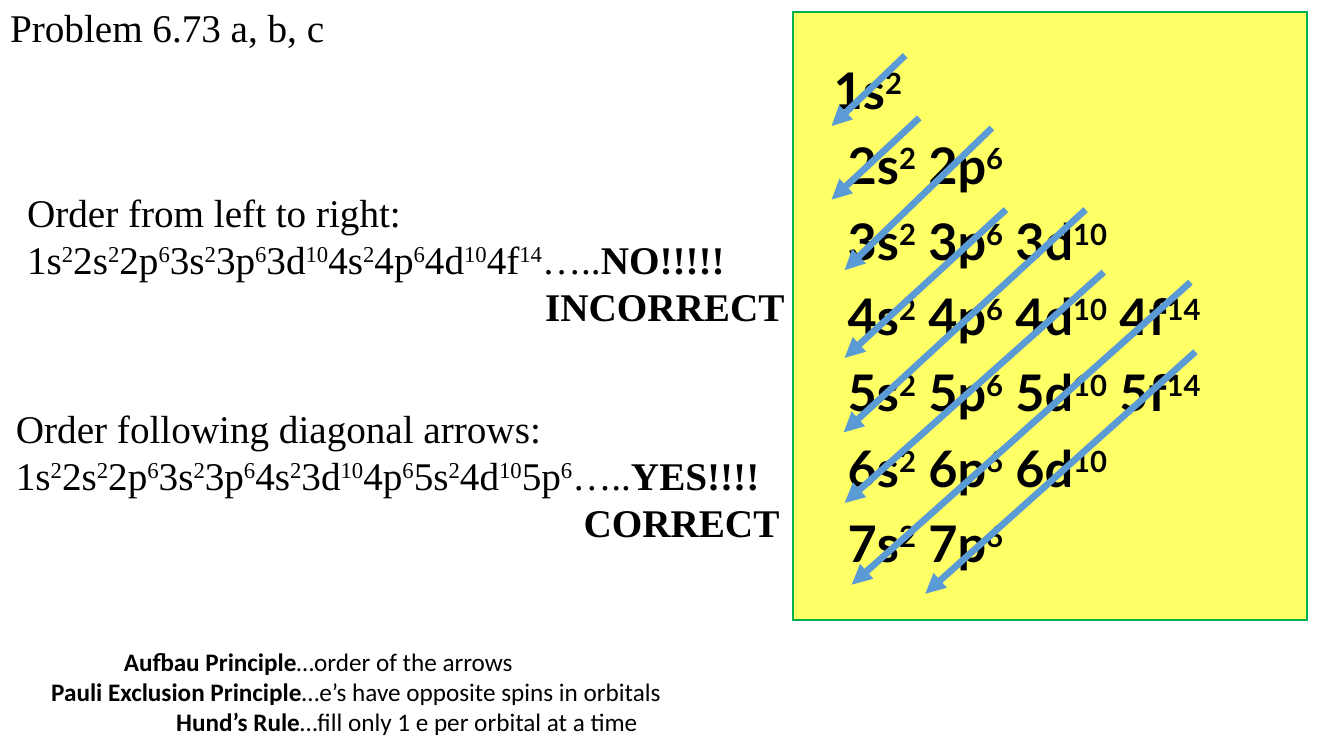
from pptx import Presentation
from pptx.dml.color import RGBColor
from pptx.enum.shapes import MSO_CONNECTOR
from pptx.enum.text import MSO_ANCHOR, MSO_AUTO_SIZE, PP_ALIGN
from pptx.oxml import parse_xml
from pptx.oxml.ns import nsdecls
from pptx.util import Pt

PX = 9144  # 100 px to the inch
LEFT, RIGHT = PP_ALIGN.LEFT, PP_ALIGN.RIGHT
TOP, MIDDLE = MSO_ANCHOR.TOP, MSO_ANCHOR.MIDDLE
NO_FIT = MSO_AUTO_SIZE.NONE
STRAIGHT = MSO_CONNECTOR.STRAIGHT

THEME = {
    "ink": RGBColor.from_string("000000"),
    "panel": RGBColor.from_string("FFFF66"),
    "border": "00B050",
    "arrow": RGBColor.from_string("5B9BD5"),
    "serif": {"name": "Times New Roman", "size": Pt(28)},
    "note": {"name": "Calibri", "size": Pt(18)},
    "orbital": {"name": "Lato", "size": Pt(36), "bold": True},
    "row_pitch": Pt(54),
    "border_width": Pt(1.5),
    "arrow_width": Pt(4.75),
}
ELECTRONS = {"s": "2", "p": "6", "d": "10", "f": "14"}


def add_run(p, text, style, raised=False, **extra):
    r = p.add_run()
    r.text = text
    for key, value in {**style, **extra}.items():
        setattr(r.font, key, value)
    r.font.color.rgb = THEME["ink"]
    if raised:
        r.font._element.set("baseline", "30000")


def add_orbitals(p, orbitals, style, gap=""):
    for i, orbital in enumerate(orbitals):
        add_run(p, (gap if i else "") + orbital, style)
        add_run(p, ELECTRONS[orbital[-1]], style, raised=True)


prs = Presentation()
prs.slide_width, prs.slide_height = 12192000, 6858000
s = prs.slides.add_slide(prs.slide_layouts[5])

# Title
sp = s.shapes.title
sp.left, sp.top, sp.width, sp.height = [v * PX for v in (0, -2, 335, 57)]
tf = sp.text_frame
for key, value in {"word_wrap": False, "auto_size": NO_FIT, "vertical_anchor": TOP}.items():
    setattr(tf, key, value)
p = tf.paragraphs[0]
p.alignment = LEFT
add_run(p, "Problem 6.73 a, b, c", THEME["serif"])

# Yellow panel with one line of orbitals per shell
table = s.shapes.add_table(1, 1, *[v * PX for v in (787, 12, 510, 603)]).table
table.first_row = table.horz_banding = False
cell = table.cell(0, 0)
cell.margin_left, cell.margin_top, cell.margin_bottom = 8 * PX, 32 * PX, 0
tcPr = cell._tc.get_or_add_tcPr()
for side in ("lnL", "lnR", "lnT", "lnB"):
    tcPr.append(parse_xml(
        f'<a:{side} {nsdecls("a")} w="{THEME["border_width"]}"><a:solidFill>'
        f'<a:srgbClr val="{THEME["border"]}"/></a:solidFill></a:{side}>'))
cell.fill.solid()
cell.fill.fore_color.rgb = THEME["panel"]
tf = cell.text_frame
for shell, letters in enumerate(("s", "sp", "spd", "spdf", "spdf", "spd", "sp"), 1):
    p = tf.paragraphs[0] if shell == 1 else tf.add_paragraph()
    p.line_spacing = THEME["row_pitch"]
    p._p.get_or_add_pPr().set("marL", str((32 if shell == 1 else 46) * PX))
    add_orbitals(p, [f"{shell}{letter}" for letter in letters], THEME["orbital"], " ")

# Wrong and right filling orders
orders = [
    ((17, 181, 771, 152), MIDDLE, "Order from left to right:",
     "1s 2s 2p 3s 3p 3d 4s 4p 4d 4f", "NO!!!!!", "INCORRECT"),
    ((6, 396, 777, 152), TOP, "Order following diagonal arrows:",
     "1s 2s 2p 3s 3p 4s 3d 4p 5s 4d 5p", "YES!!!!", "CORRECT"),
]
for box, anchor, heading, orbitals, answer, verdict in orders:
    tf = s.shapes.add_textbox(*[v * PX for v in box]).text_frame
    tf.word_wrap = True
    tf.vertical_anchor = anchor
    add_run(tf.paragraphs[0], heading, THEME["serif"])
    p = tf.add_paragraph()
    add_orbitals(p, orbitals.split(), THEME["serif"])
    add_run(p, "…..", THEME["serif"])
    add_run(p, answer, THEME["serif"], bold=True)
    p = tf.add_paragraph()
    p.alignment = RIGHT
    add_run(p, verdict, THEME["serif"], bold=True)

# Diagonal arrows
arrows = [
    (898, 55, 825, 125), (912, 117, 825, 198), (984, 127, 838, 268), (998, 208, 838, 355),
    (1077, 208, 837, 429), (1095, 270, 838, 499), (1181, 280, 845, 580), (1186, 349, 918, 589),
]
for ends in arrows:
    line = s.shapes.add_connector(STRAIGHT, *[v * PX for v in ends])
    line.line.color.rgb = THEME["arrow"]
    line.line.width = THEME["arrow_width"]
    line.line._get_or_add_ln().append(parse_xml(f'<a:tailEnd {nsdecls("a")} type="triangle"/>'))
    line._element.spPr.append(parse_xml(f'<a:effectLst {nsdecls("a")}/>'))

# Principles, each with its own indent
principles = [
    (72, "Aufbau Principle", "…order of the arrows"),
    (0, "Pauli Exclusion Principle", "…e’s have opposite spins in orbitals"),
    (124, "Hund’s Rule", "…fill only 1 e per orbital at a time"),
]
tf = s.shapes.add_textbox(*[v * PX for v in (41, 636, 650, 101)]).text_frame
tf.word_wrap = True
for i, (indent, name, meaning) in enumerate(principles):
    p = tf.add_paragraph() if i else tf.paragraphs[0]
    p._p.get_or_add_pPr().set("marL", str(indent * PX))
    add_run(p, name, THEME["note"], bold=True)
    add_run(p, meaning, THEME["note"])

prs.save("out.pptx")
